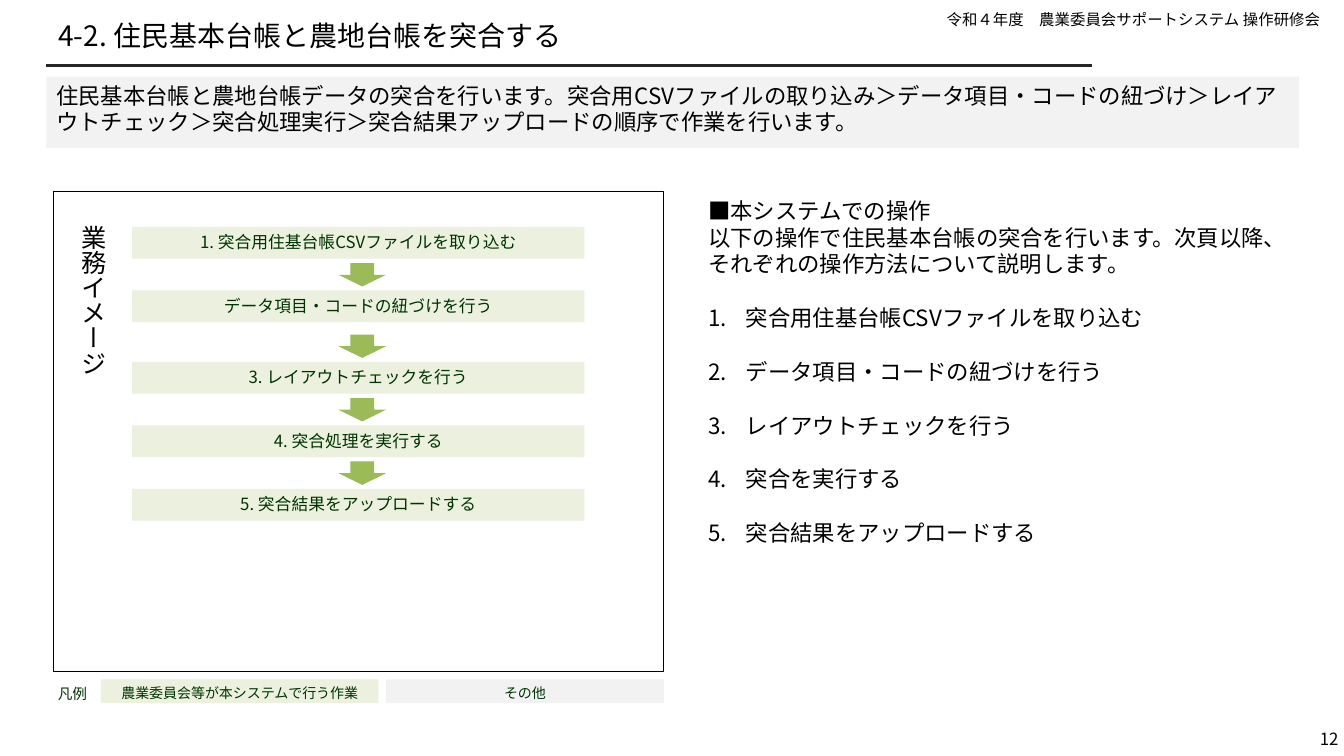
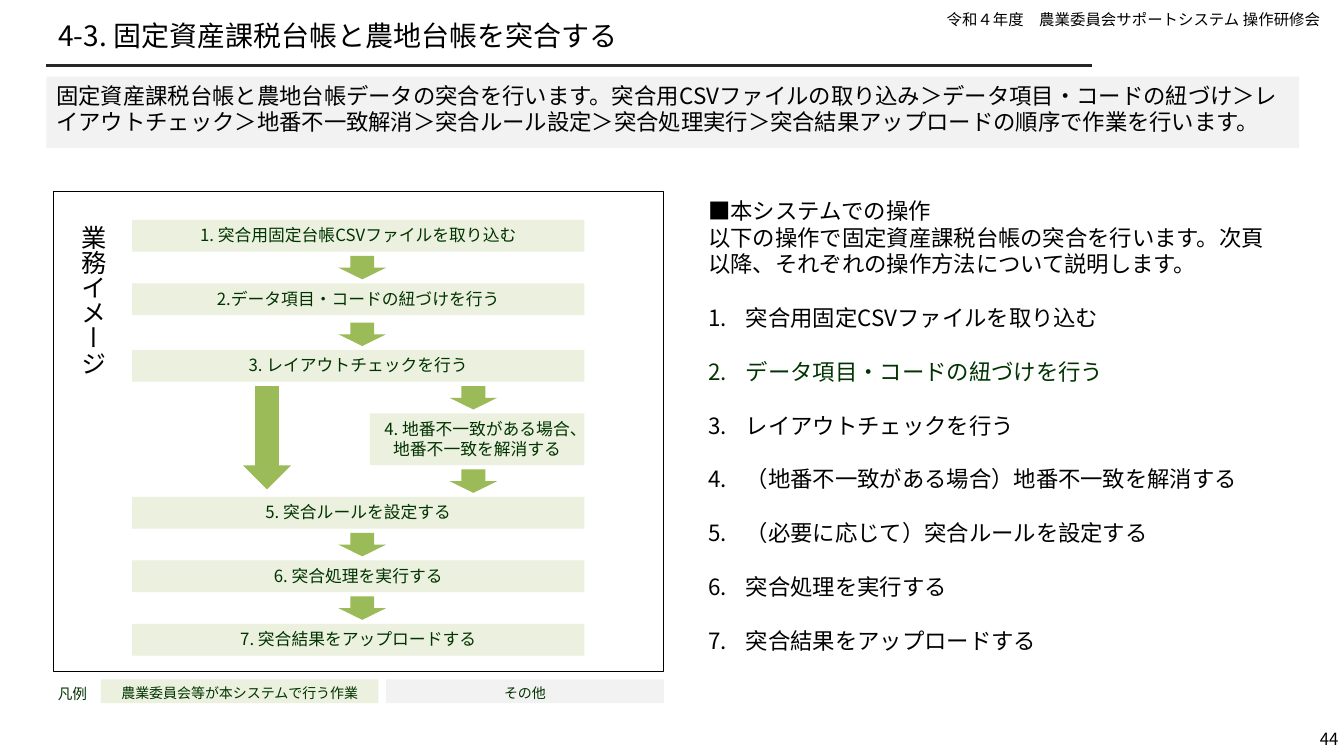
import pptx
import pptx.util
import pptx.dml.color
import pptx.enum.shapes
import pptx.enum.text
import pptx.oxml.ns
import lxml.etree

Cm, Pt = pptx.util.Cm, pptx.util.Pt
SHAPE = pptx.enum.shapes.MSO_SHAPE
ALIGN = pptx.enum.text.PP_ALIGN
ANCHOR = pptx.enum.text.MSO_ANCHOR
qn = pptx.oxml.ns.qn

# Shared style
FONT = "Noto Sans CJK JP"
BLACK, RULE, DARK_GREEN = "000000", "262626", "003300"
PALE_GREEN, GREEN, GRAY = "EBF1DE", "9BBB59", "F2F2F2"
COURSE = "令和４年度　農業委員会サポートシステム 操作研修会"
INSETS = (0.25, 0.13, 0.25, 0.13)

# Flow chart measures in cm
STEP_LEFT, STEP_WIDTH, STEP_HEIGHT = 3.33, 11.4, 0.8
ARROW_WIDTH, ARROW_HEIGHT, ARROW_RISE = 1.2, 0.59, 0.69
MAIN_AXIS, BYPASS_AXIS, BRANCH_AXIS = 9.13, 6.73, 11.93
BRANCH_WIDTH, BRANCH_HEIGHT = 5.41, 1.3


def color(value):
    return pptx.dml.color.RGBColor.from_string(value)


def add_run(paragraph, text, size, ink=BLACK):
    run = paragraph.add_run()
    run.text = text
    run.font.size = Pt(size)
    run.font.color.rgb = color(ink)
    run.font.name = FONT
    east_asian = lxml.etree.SubElement(run.font._element, qn("a:ea"))
    east_asian.set("typeface", FONT)


def set_frame(frame, insets=INSETS, anchor=ANCHOR.TOP):
    frame.word_wrap = True
    frame.vertical_anchor = anchor
    (frame.margin_left, frame.margin_top,
     frame.margin_right, frame.margin_bottom) = map(Cm, insets)


def write(frame, text, size, ink=BLACK, align=ALIGN.LEFT):
    paragraph = frame.paragraphs[0]
    paragraph.alignment = align
    add_run(paragraph, text, size, ink)


def add_label(slide, box, text, size, ink=BLACK, align=ALIGN.LEFT,
              insets=INSETS, anchor=ANCHOR.TOP):
    label = slide.shapes.add_textbox(*map(Cm, box))
    set_frame(label.text_frame, insets, anchor)
    write(label.text_frame, text, size, ink, align)
    return label


def add_block(slide, box, fill=None, line=None, kind=SHAPE.RECTANGLE):
    block = slide.shapes.add_shape(kind, *map(Cm, box))
    block.shadow.inherit = False
    if fill:
        block.fill.solid()
        block.fill.fore_color.rgb = color(fill)
    else:
        block.fill.background()
    if line:
        block.line.color.rgb = color(line)
        block.line.width = Pt(0.75)
    else:
        block.line.fill.background()
    return block


def add_text_block(slide, box, fill, text, size, ink=DARK_GREEN, align=ALIGN.CENTER):
    block = add_block(slide, box, fill)
    set_frame(block.text_frame)
    write(block.text_frame, text, size, ink, align)


def add_rule(slide, left, right, y):
    rule = slide.shapes.add_connector(
        pptx.enum.shapes.MSO_CONNECTOR.STRAIGHT, Cm(left), Cm(y), Cm(right), Cm(y))
    rule.line.color.rgb = color(RULE)
    rule.line.width = Pt(1.5)
    lxml.etree.SubElement(rule._element.spPr, qn("a:effectLst"))


def add_arrow(slide, axis, top, height=ARROW_HEIGHT):
    add_block(slide, (axis - ARROW_WIDTH / 2, top, ARROW_WIDTH, height),
              GREEN, kind=SHAPE.DOWN_ARROW)


def add_page_frame(slide, title, summary, number):
    add_label(slide, (0.33, 0.13, 33.2, 0.74), COURSE, 11, align=ALIGN.RIGHT)
    add_rule(slide, 1.17, 27.53, 1.65)
    add_label(slide, (32.33, 18.31, 1.4, 0.61), number, 12, align=ALIGN.RIGHT,
              insets=(0, 0, 0, 0), anchor=ANCHOR.MIDDLE)
    add_label(slide, (1.17, 0.13, 26.36, 1.52), title, 20,
              insets=(0.3, 0, 0, 0), anchor=ANCHOR.MIDDLE)
    add_text_block(slide, (1.17, 1.93, 31.57, 1.8), GRAY, summary, 16, BLACK, ALIGN.LEFT)


def add_flow_panel(slide):
    add_block(slide, (1.35, 4.83, 15.37, 12.1), line=BLACK)
    heading = add_label(slide, (1.7, 5.54, 1.27, 5.61), "業務イメージ", 18)
    heading.text_frame._txBody.bodyPr.set("vert", "eaVert")
    # Legend
    add_label(slide, (1.14, 17.12, 1.37, 0.79), "凡例", 10.5, DARK_GREEN, ALIGN.CENTER)
    legend = [(2.54, PALE_GREEN, "農業委員会等が本システムで行う作業"), (9.73, GRAY, "その他")]
    for left, fill, text in legend:
        add_text_block(slide, (left, 17.12, 7.0, 0.6), fill, text, 10)


def add_steps(slide, steps, branch=None):
    """Each step is (top, text); a branch is (top, text, position of the step it joins)."""
    joined = branch[2] if branch else None
    for position, (top, text) in enumerate(steps):
        add_text_block(slide, (STEP_LEFT, top, STEP_WIDTH, STEP_HEIGHT), PALE_GREEN, text, 12)
        if position:
            axis = BRANCH_AXIS if position == joined else MAIN_AXIS
            add_arrow(slide, axis, top - ARROW_RISE)
    if branch:
        top, text, _ = branch
        left = STEP_LEFT + STEP_WIDTH - BRANCH_WIDTH
        add_text_block(slide, (left, top, BRANCH_WIDTH, BRANCH_HEIGHT), PALE_GREEN, text, 12)
        start = top - ARROW_RISE
        add_arrow(slide, BRANCH_AXIS, start)
        add_arrow(slide, BYPASS_AXIS, start, 2.6)


def add_operations(slide, intro, operations, highlighted=None):
    panel = slide.shapes.add_textbox(Cm(17.6), Cm(4.83), Cm(14.94), Cm(9.83))
    frame = panel.text_frame
    set_frame(frame)
    write(frame, "■本システムでの操作", 16)
    add_run(frame.add_paragraph(), intro, 16)
    for operation in operations:
        paragraph = frame.add_paragraph()
        properties = paragraph._p.get_or_add_pPr()
        properties.set("marL", str(Cm(0.95)))
        properties.set("indent", str(-Cm(0.95)))
        paragraph.space_before = Pt(19.2)
        numbering = lxml.etree.SubElement(properties, qn("a:buAutoNum"))
        numbering.set("type", "arabicPeriod")
        add_run(paragraph, operation, 16, DARK_GREEN if operation == highlighted else BLACK)


LINKING = "データ項目・コードの紐づけを行う"
LAYOUT_CHECK = "レイアウトチェックを行う"
UPLOAD = "突合結果をアップロードする"

PAGES = [
    dict(
        title="4-2. 住民基本台帳と農地台帳を突合する",
        summary="住民基本台帳と農地台帳データの突合を行います。突合用CSVファイルの取り込み＞"
                "データ項目・コードの紐づけ＞レイアウトチェック＞突合処理実行＞"
                "突合結果アップロードの順序で作業を行います。",
        number="12",
        steps=[(5.72, "1. 突合用住基台帳CSVファイルを取り込む"),
               (7.32, LINKING),
               (9.12, "3. " + LAYOUT_CHECK),
               (10.72, "4. 突合処理を実行する"),
               (12.32, "5. " + UPLOAD)],
        branch=None,
        intro="以下の操作で住民基本台帳の突合を行います。次頁以降、"
              "それぞれの操作方法について説明します。",
        operations=["突合用住基台帳CSVファイルを取り込む", LINKING, LAYOUT_CHECK,
                    "突合を実行する", UPLOAD],
        highlighted=None,
    ),
    dict(
        title="4-3. 固定資産課税台帳と農地台帳を突合する",
        summary="固定資産課税台帳と農地台帳データの突合を行います。突合用CSVファイルの取り込み＞"
                "データ項目・コードの紐づけ＞レイアウトチェック＞地番不一致解消＞"
                "突合ルール設定＞突合処理実行＞突合結果アップロードの順序で作業を行います。",
        number="44",
        steps=[(5.54, "1. 突合用固定台帳CSVファイルを取り込む"),
               (7.14, "2." + LINKING),
               (8.82, "3. " + LAYOUT_CHECK),
               (12.52, "5. 突合ルールを設定する"),
               (14.12, "6. 突合処理を実行する"),
               (15.72, "7. " + UPLOAD)],
        branch=(10.42, "4. 地番不一致がある場合、地番不一致を解消する", 3),
        intro="以下の操作で固定資産課税台帳の突合を行います。次頁以降、"
              "それぞれの操作方法について説明します。",
        operations=["突合用固定CSVファイルを取り込む", LINKING, LAYOUT_CHECK,
                    "（地番不一致がある場合）地番不一致を解消する",
                    "（必要に応じて）突合ルールを設定する",
                    "突合処理を実行する", UPLOAD],
        highlighted=LINKING,
    ),
]


def main():
    deck = pptx.Presentation()
    deck.slide_width, deck.slide_height = Cm(33.87), Cm(19.05)
    for page in PAGES:
        slide = deck.slides.add_slide(deck.slide_layouts[6])
        add_page_frame(slide, page["title"], page["summary"], page["number"])
        add_flow_panel(slide)
        add_steps(slide, page["steps"], page["branch"])
        add_operations(slide, page["intro"], page["operations"], page["highlighted"])
    deck.save("out.pptx")


if __name__ == "__main__":
    main()
